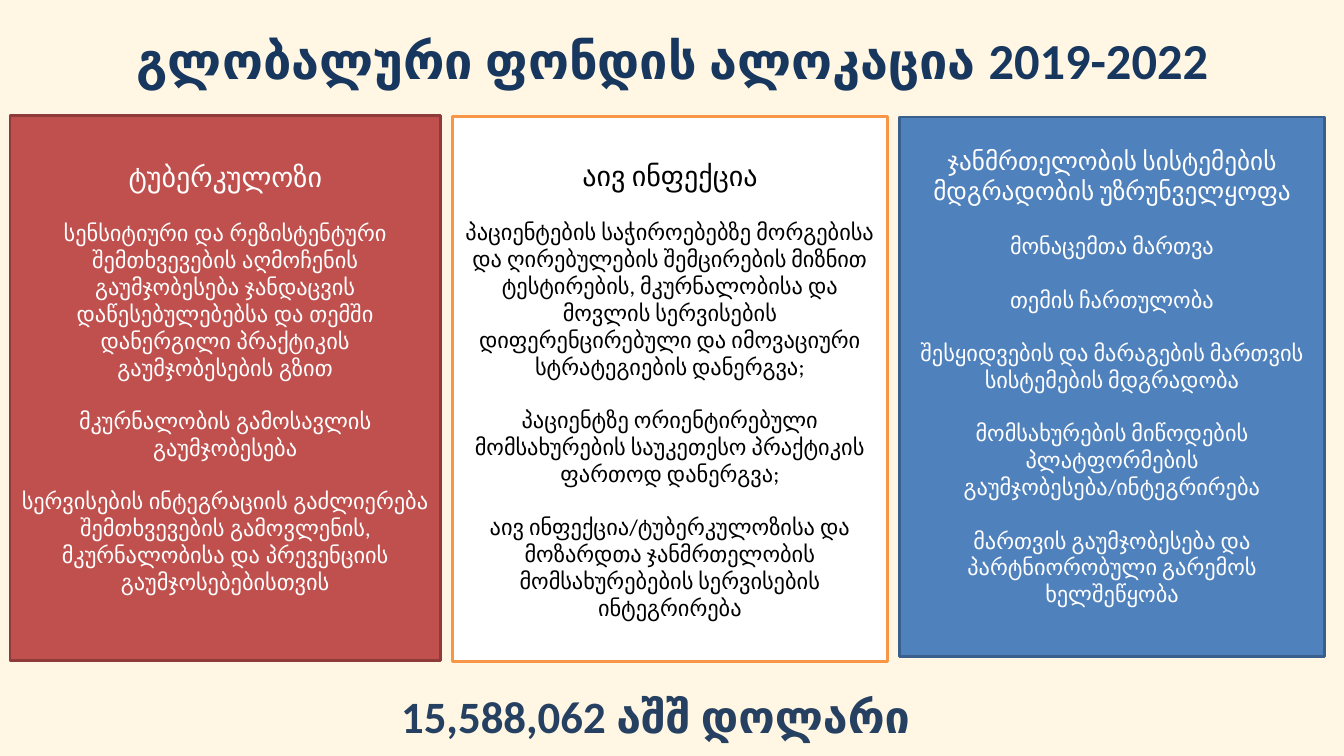
import pptx
import pptx.util
from pptx.dml.color import RGBColor
from pptx.enum.shapes import MSO_SHAPE
from pptx.enum.text import MSO_ANCHOR, PP_ALIGN

Inches, Pt = pptx.util.Inches, pptx.util.Pt

BACKGROUND = "FFF6E3"
TITLE_RUNS = [("გლობალური ფონდის ალოკაცია ", "Lato"), ("2019-2022", "Calibri")]
TOTAL = "15,588,062 აშშ დოლარი"
BODY_SIZE = 16
PARAGRAPH_GAP = 19

CARDS = [
    {
        "box": (0.1, 1.15, 4.27, 5.4), "top_inset": 0.43,
        "fill": "C0504D", "line": "8E3B39", "text": "FFFFFF",
        "font": "Lato", "heading_size": 20,
        "heading": "ტუბერკულოზი",
        "body": [
            "სენსიტიური და რეზისტენტური შემთხვევების აღმოჩენის გაუმჯობესება "
            "ჯანდაცვის დაწესებულებებსა და თემში დანერგილი პრაქტიკის "
            "გაუმჯობესების გზით",
            "მკურნალობის გამოსავლის გაუმჯობესება",
            "სერვისების ინტეგრაციის გაძლიერება შემთხვევების გამოვლენის, "
            "მკურნალობისა და პრევენციის გაუმჯოსებებისთვის",
        ],
    },
    {
        "box": (4.49, 1.16, 4.31, 5.4), "top_inset": 0.41,
        "fill": "FFFFFF", "line": "F79646", "text": "000000",
        "font": "Calibri", "heading_size": 20,
        "heading": "აივ ინფექცია",
        "body": [
            "პაციენტების საჭიროებებზე მორგებისა და ღირებულების შემცირების "
            "მიზნით ტესტირების, მკურნალობისა და მოვლის სერვისების "
            "დიფერენცირებული და იმოვაციური სტრატეგიების დანერგვა;",
            "პაციენტზე ორიენტირებული მომსახურების საუკეთესო პრაქტიკის "
            "ფართოდ დანერგვა;",
            "აივ ინფექცია/ტუბერკულოზისა და მოზარდთა ჯანმრთელობის "
            "მომსახურებების სერვისების ინტეგრირება",
        ],
    },
    {
        "box": (8.92, 1.16, 4.22, 5.35), "top_inset": 0.28,
        "fill": "4F81BD", "line": "3A5F8C", "text": "FFFFFF",
        "font": "Calibri", "heading_size": 18,
        "heading": "ჯანმრთელობის სისტემების მდგრადობის უზრუნველყოფა",
        "body": [
            "მონაცემთა მართვა",
            "თემის ჩართულობა",
            "შესყიდვების და მარაგების მართვის სისტემების მდგრადობა",
            "მომსახურების მიწოდების პლატფორმების გაუმჯობესება/ინტეგრირება",
            "მართვის გაუმჯობესება და პარტნიორობული გარემოს ხელშეწყობა",
        ],
    },
]


def color(hex_value):
    return RGBColor.from_string(hex_value)


def set_font(font, size, hex_value, name=None, bold=False):
    font.size = Pt(size)
    font.color.rgb = color(hex_value)
    font.bold = bold
    if name:
        font.name = name


def add_text_box(slide, box, anchor):
    frame = slide.shapes.add_textbox(*map(Inches, box)).text_frame
    frame.word_wrap = True
    frame.vertical_anchor = anchor
    return frame.paragraphs[0]


def add_card(slide, card):
    shape = slide.shapes.add_shape(
        MSO_SHAPE.FLOWCHART_PROCESS, *map(Inches, card["box"]))
    shape.shadow.inherit = False
    shape.fill.solid()
    shape.fill.fore_color.rgb = color(card["fill"])
    shape.line.color.rgb = color(card["line"])
    shape.line.width = Pt(2)

    frame = shape.text_frame
    frame.word_wrap = True
    frame.vertical_anchor = MSO_ANCHOR.TOP
    frame.margin_top = Inches(card["top_inset"])
    for index, text in enumerate([card["heading"], *card["body"]]):
        paragraph = frame.add_paragraph() if index else frame.paragraphs[0]
        paragraph.text = text
        paragraph.alignment = PP_ALIGN.CENTER
        paragraph.space_before = Pt(PARAGRAPH_GAP if index else 0)
        size = BODY_SIZE if index else card["heading_size"]
        set_font(paragraph.font, size, card["text"], card["font"])


def main():
    presentation = pptx.Presentation()
    presentation.slide_width = Inches(13.33)
    presentation.slide_height = Inches(7.5)
    slide = presentation.slides.add_slide(presentation.slide_layouts[6])
    slide.background.fill.solid()
    slide.background.fill.fore_color.rgb = color(BACKGROUND)

    title = add_text_box(slide, (0.67, 0, 12, 1.17), MSO_ANCHOR.MIDDLE)
    title.alignment = PP_ALIGN.CENTER
    set_font(title.font, 36, "17375E", bold=True)
    for text, font_name in TITLE_RUNS:
        run = title.add_run()
        run.text = text
        run.font.name = font_name

    for card in CARDS:
        add_card(slide, card)

    total = add_text_box(slide, (3.88, 6.78, 5.46, 0.72), MSO_ANCHOR.TOP)
    total.text = TOTAL
    set_font(total.font, 32, "254061", "Calibri", bold=True)

    presentation.save("out.pptx")


if __name__ == "__main__":
    main()
